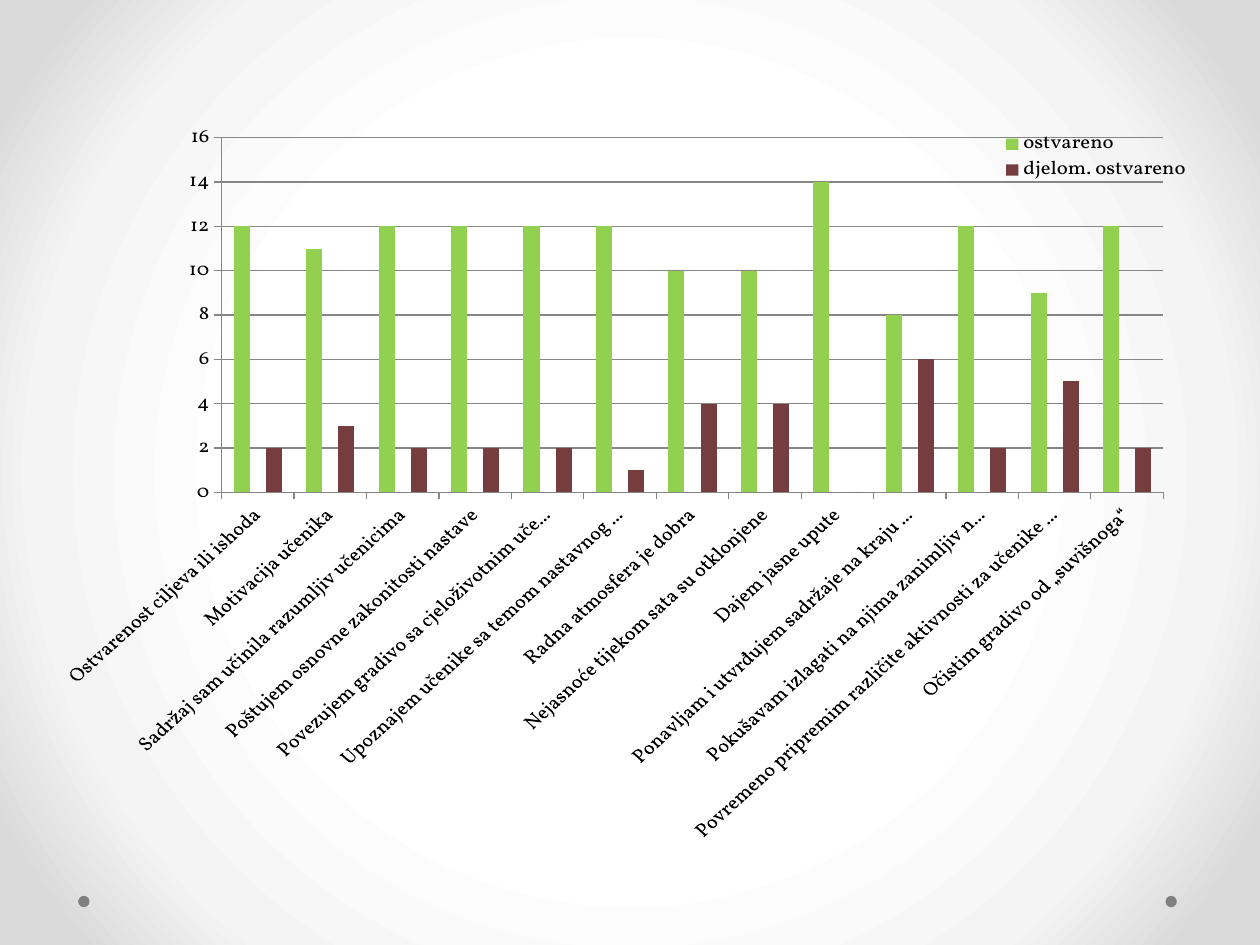
from pptx import Presentation
from pptx.chart.data import CategoryChartData
from pptx.dml.color import RGBColor
from pptx.enum.chart import XL_CHART_TYPE, XL_LEGEND_POSITION, XL_TICK_MARK
from pptx.enum.shapes import MSO_SHAPE
from pptx.oxml import parse_xml
from pptx.oxml.ns import nsdecls
from pptx.util import Inches, Pt

GOALS = [
    # category, achieved, partly achieved
    ("Ostvarenost ciljeva ili ishoda", 12, 2),
    ("Motivacija učenika", 11, 3),
    ("Sadržaj sam učinila razumljiv učenicima", 12, 2),
    ("Poštujem osnovne zakonitosti nastave", 12, 2),
    ("Povezujem gradivo sa cjeloživotnim učenjem", 12, 2),
    ("Upoznajem učenike sa temom nastavnog sata", 12, 1),
    ("Radna atmosfera je dobra", 10, 4),
    ("Nejasnoće tijekom sata su otklonjene", 10, 4),
    ("Dajem jasne upute", 14, 0),
    ("Ponavljam i utvrđujem sadržaje na kraju sata", 8, 6),
    ("Pokušavam izlagati na njima zanimljiv način", 12, 2),
    ("Povremeno pripremim različite aktivnosti za učenike / "
     "koristim različite metode rada", 9, 5),
    ("Očistim gradivo od „suvišnoga“", 12, 2),
]


def color(code):
    return RGBColor.from_string(code)


def layout(x, y, w, h, inner=False):
    """Manual chart layout, in shares of the chart's size."""
    target = '<c:layoutTarget val="inner"/>' if inner else ""
    sizes = "".join(f'<c:{key} val="{val}"/>'
                    for key, val in zip("xywh", (x, y, w, h)))
    return parse_xml(
        f'<c:layout {nsdecls("c")}><c:manualLayout>{target}'
        '<c:xMode val="edge"/><c:yMode val="edge"/>'
        f'{sizes}</c:manualLayout></c:layout>')


class Deck:
    font = "Vollkorn"
    ink = "000000"
    rule = "868686"

    def __init__(self, width, height):
        self.deck = Presentation()
        self.deck.slide_width = Inches(width)
        self.deck.slide_height = Inches(height)
        self.slide = self.deck.slides.add_slide(self.deck.slide_layouts[6])

    def place(self, x, y, w, h):
        """Turn shares of the slide's size into lengths."""
        wide, high = self.deck.slide_width, self.deck.slide_height
        return [round(n) for n in (x * wide, y * high, w * wide, h * high)]

    def glow(self, stops):
        """Fill the background with a gradient from the centre outwards."""
        marks = "".join(
            f'<a:gs pos="{pos * 1000}"><a:srgbClr val="{code}"/></a:gs>'
            for pos, code in stops)
        sides = " ".join(f'{side}="50000"' for side in "ltrb")
        self.slide.element.cSld.insert(0, parse_xml(
            f'<p:bg {nsdecls("p", "a")}><p:bgPr><a:gradFill rotWithShape="1">'
            f'<a:gsLst>{marks}</a:gsLst><a:path path="circle">'
            f'<a:fillToRect {sides}/></a:path></a:gradFill>'
            '<a:effectLst/></p:bgPr></p:bg>'))

    def dot(self, x, y, w, h, fill):
        dot = self.slide.shapes.add_shape(
            MSO_SHAPE.OVAL, *self.place(x, y, w, h))
        dot.shadow.inherit = False
        dot.fill.solid()
        dot.fill.fore_color.rgb = color(fill)
        dot.line.fill.background()

    def style(self, font, size):
        look = {"name": self.font, "size": Pt(size), "bold": False}
        for key, val in look.items():
            setattr(font, key, val)
        font.color.rgb = color(self.ink)

    def stroke(self, line):
        line.width = Pt(0.75)
        line.color.rgb = color(self.rule)

    def axis(self, axis, **looks):
        looks = {"major_tick_mark": XL_TICK_MARK.OUTSIDE,
                 "minor_tick_mark": XL_TICK_MARK.NONE, **looks}
        for key, val in looks.items():
            setattr(axis, key, val)
        self.stroke(axis.format.line)
        self.style(axis.tick_labels.font, 12)

    def legend(self, chart, hidden, spot):
        chart.has_legend = True
        legend = chart.legend
        legend.position = XL_LEGEND_POSITION.RIGHT
        legend.include_in_layout = False
        self.style(legend.font, 12)
        entry = parse_xml(
            f'<c:legendEntry {nsdecls("c")}><c:idx val="{hidden}"/>'
            '<c:delete val="1"/></c:legendEntry>')
        root = chart.element
        for old in root.xpath("c:chart/c:legend/c:layout"):
            old.getparent().remove(old)
        pos = root.xpath("c:chart/c:legend/c:legendPos")[0]
        pos.addnext(entry)
        entry.addnext(layout(*spot))

    def bars(self, box, names, series, plot, spot):
        """Draw columns; a series without a legend entry acts as a spacer."""
        data = CategoryChartData()
        data.categories = names
        for name, vals, _ in series:
            data.add_series(name, vals)
        chart = self.slide.shapes.add_chart(
            XL_CHART_TYPE.COLUMN_CLUSTERED, *self.place(*box), data).chart
        chart.has_title = False
        self.style(chart.font, 10)
        area = chart.plots[0]
        area.gap_width, area.overlap = 150, 0
        area.vary_by_categories = False
        for item, (_, _, fill) in zip(area.series, series):
            item.invert_if_negative = False
            item.format.fill.solid()
            item.format.fill.fore_color.rgb = color(fill)
        self.axis(chart.category_axis, has_major_gridlines=False)
        self.axis(chart.value_axis, has_major_gridlines=True,
                  minimum_scale=0, maximum_scale=16, major_unit=2)
        self.stroke(chart.value_axis.major_gridlines.format.line)
        root = chart.element
        root.xpath(".//c:catAx/c:txPr/a:bodyPr")[0].set("rot", "-2700000")
        frame = root.xpath("c:chart/c:plotArea")[0]
        for old in frame.xpath("c:layout"):
            frame.remove(old)
        frame.insert(0, layout(*plot, inner=True))
        self.legend(chart, 1, spot)


def main():
    page = Deck(10, 7.5)
    page.glow([(50, "FFFFFF"), (76, "F4F4F4"), (92, "DADADA")])
    for x in (0.925, 0.062):
        page.dot(x, 0.948, 0.009, 0.012, "808080")
    names, done, part = zip(*GOALS)
    series = [("ostvareno", done, "92D050"),
              ("Series 2", [None] * len(names), "9C5252"),
              ("djelom. ostvareno", part, "753D3D")]
    page.bars((0.05, 0.132, 0.9, 0.761), names, series,
              plot=(0.13, 0.02, 0.84, 0.55), spot=(0.82, 0.01, 0.18, 0.08))
    page.deck.save("out.pptx")


if __name__ == "__main__":
    main()
